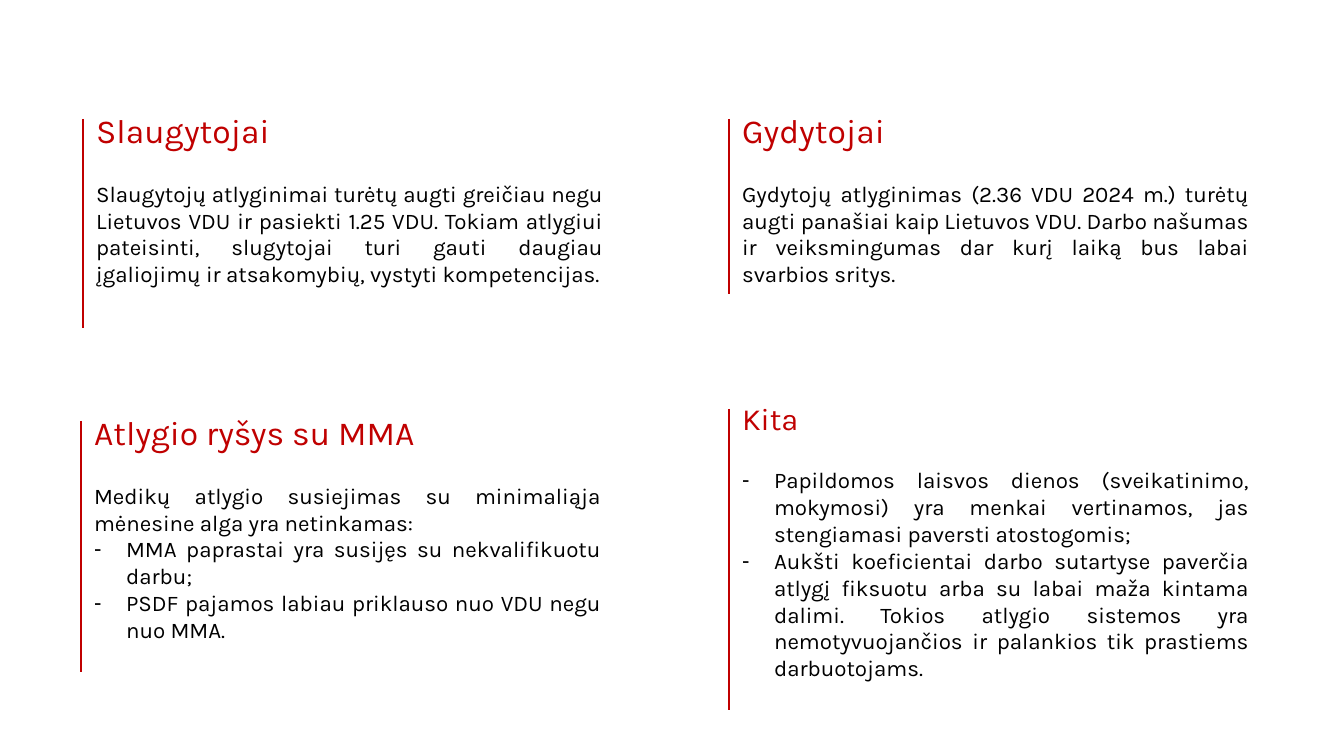
from lxml import etree
from pptx import Presentation
from pptx import util as u
from pptx.dml.color import RGBColor
from pptx.enum import shapes, text
from pptx.oxml.ns import qn

PX = 914400 / 100.8
COLORS = {"red": "C00000", "black": "000000"}
COMPARISON_LAYOUT = 4
BOX_WIDTH = 527
RULE_GAP, RULE_DROP = 3, 14
BULLET_INDENT = 32

SECTIONS = [
    dict(left=86, top=105, height=218, rule=209, size=24, heading="Slaugytojai",
         intro="Slaugytojų atlyginimai turėtų augti greičiau negu Lietuvos VDU ir pasiekti "
               "1.25 VDU. Tokiam atlygiui pateisinti, slugytojai turi gauti daugiau "
               "įgaliojimų ir atsakomybių, vystyti kompetencijas."),
    dict(left=732, top=105, height=192, rule=175, size=24, heading="Gydytojai",
         intro="Gydytojų atlyginimas (2.36 VDU 2024 m.) turėtų augti panašiai kaip Lietuvos "
               "VDU. Darbo našumas ir veiksmingumas dar kurį laiką bus labai svarbios sritys."),
    dict(left=84, top=407, height=245, rule=251, size=24, heading="Atlygio ryšys su MMA",
         intro="Medikų atlygio susiejimas su minimaliąja mėnesine alga yra netinkamas:",
         points=["MMA paprastai yra susijęs su nekvalifikuotu darbu;",
                 "PSDF pajamos labiau priklauso nuo VDU negu nuo MMA."]),
    dict(left=732, top=395, height=319, rule=301, size=22, heading="Kita",
         points=["Papildomos laisvos dienos (sveikatinimo, mokymosi) yra menkai vertinamos, "
                 "jas stengiamasi paversti atostogomis;",
                 "Aukšti koeficientai darbo sutartyse paverčia atlygį fiksuotu arba su labai "
                 "maža kintama dalimi. Tokios atlygio sistemos yra nemotyvuojančios ir "
                 "palankios tik prastiems darbuotojams."]),
]


def px(length):
    return u.Emu(round(length * PX))


class SlideBuilder:
    """Draws headed sections in one style on the current slide."""

    def __init__(self, slide, font="Karla", body_size=16, heading_gap=21):
        self.slide = slide
        self.font = font
        self.body_size = body_size
        self.heading_gap = heading_gap

    def paragraph(self, para, words, size, color, align, before=0, bullet=False):
        para.text = words
        para.alignment = align
        para.line_spacing = 1.0
        para.space_before = u.Pt(before)
        para.space_after = u.Pt(0)
        props = para._p.get_or_add_pPr()
        indent = px(BULLET_INDENT) if bullet else 0
        props.set("marL", str(indent))
        props.set("indent", str(-indent))
        if bullet:
            tint = etree.SubElement(props, qn("a:buClr"))
            etree.SubElement(tint, qn("a:srgbClr")).set("val", COLORS[color])
            etree.SubElement(props, qn("a:buChar")).set("char", "-")
        else:
            etree.SubElement(props, qn("a:buNone"))
        para.font.name = self.font
        para.font.size = u.Pt(size)
        para.font.bold = False
        para.font.color.rgb = RGBColor.from_string(COLORS[color])

    def section(self, box, left, top, height, size, heading, intro=None, points=()):
        box.left, box.top = px(left), px(top)
        box.width, box.height = px(BOX_WIDTH), px(height)
        frame = box.text_frame
        frame.word_wrap = True
        frame.auto_size = text.MSO_AUTO_SIZE.NONE
        frame.vertical_anchor = text.MSO_ANCHOR.TOP
        self.paragraph(frame.paragraphs[0], heading, size, "red", text.PP_ALIGN.LEFT)
        body = [(intro, False)] if intro else []
        body += [(point, True) for point in points]
        for index, (words, bullet) in enumerate(body):
            before = self.heading_gap if index == 0 else 0
            self.paragraph(frame.add_paragraph(), words, self.body_size, "black",
                           text.PP_ALIGN.JUSTIFY, before, bullet)

    def rule(self, left, top, length):
        line = self.slide.shapes.add_connector(
            shapes.MSO_CONNECTOR.STRAIGHT, px(left), px(top), px(left), px(top + length))
        line.line.color.rgb = RGBColor.from_string(COLORS["red"])
        line.line.width = u.Pt(1.5)
        etree.SubElement(line._element.spPr, qn("a:effectLst"))


def main():
    deck = Presentation()
    deck.slide_width, deck.slide_height = px(1344), px(756)
    page = deck.slides.add_slide(deck.slide_layouts[COMPARISON_LAYOUT])
    title = page.shapes.title._element
    title.getparent().remove(title)
    builder = SlideBuilder(page)
    for box, section in zip(list(page.placeholders), SECTIONS):
        content = {key: value for key, value in section.items() if key != "rule"}
        builder.section(box, **content)
        builder.rule(section["left"] - RULE_GAP, section["top"] + RULE_DROP, section["rule"])
    deck.save("out.pptx")


if __name__ == "__main__":
    main()
